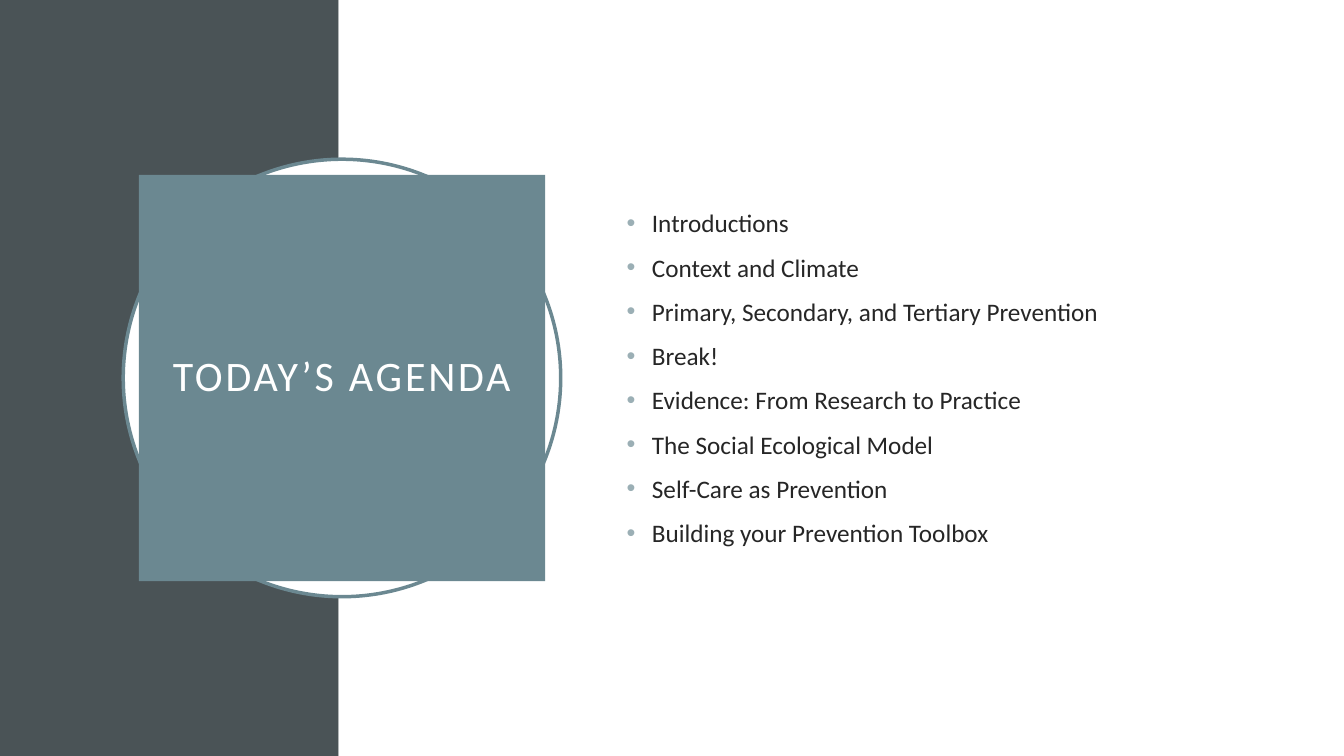
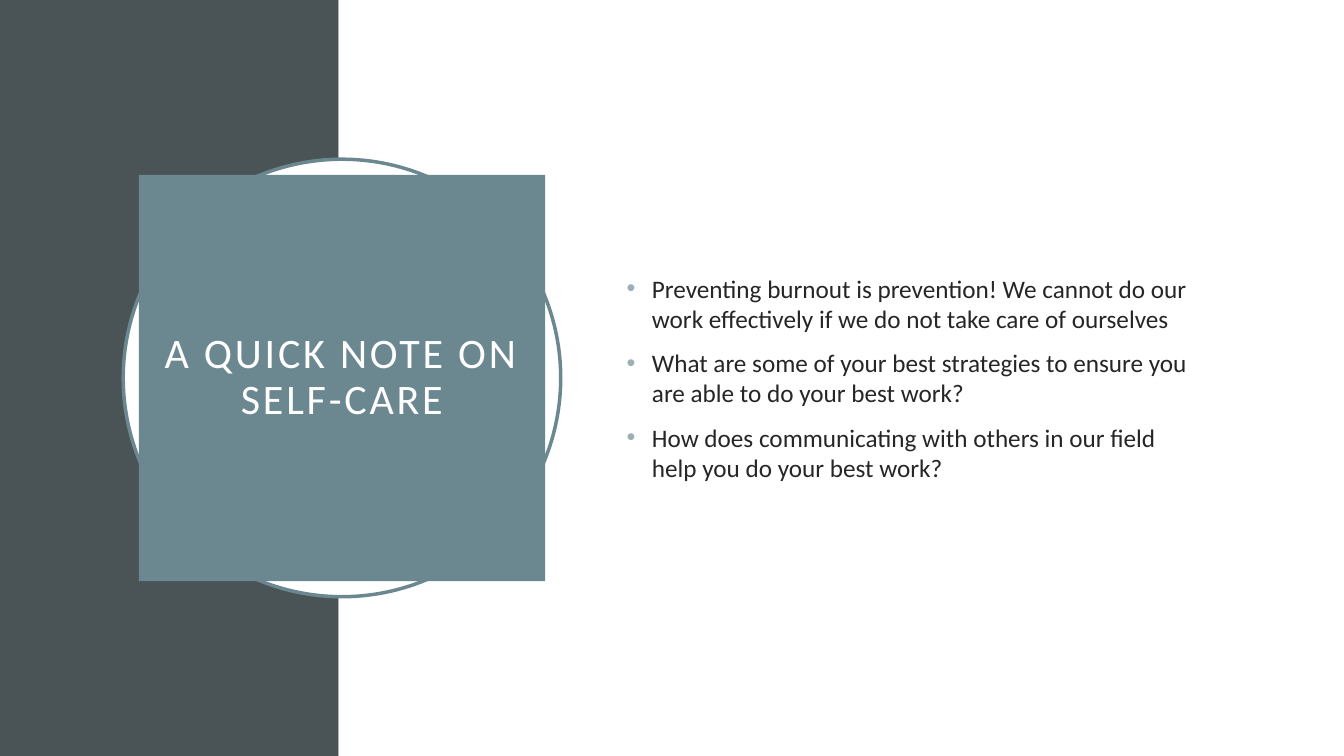
import dataclasses
import typing

import pptx
import pptx.dml.color
import pptx.enum.shapes
import pptx.enum.text
import pptx.oxml
import pptx.oxml.ns
import pptx.util

Pt = pptx.util.Pt
ShapeKind = pptx.enum.shapes.MSO_SHAPE
Align = pptx.enum.text.PP_ALIGN
Anchor = pptx.enum.text.MSO_ANCHOR

COLORS = {
    "band": "4A5356",
    "accent": "6B8891",
    "bullet": "9BAFB5",
    "text": "262626",
    "white": "FFFFFF",
}
FONT = "Calibri"
SLIDE_WIDTH, SLIDE_HEIGHT = 960, 540
BAND_WIDTH = 241.9
MEDALLION_X, MEDALLION_Y = 244.3, 270
RING_SIZE, TITLE_SIZE = 312.5, 290.2
BULLET_INDENT = 18

TITLE_FRAME = {
    "word_wrap": True,
    "vertical_anchor": Anchor.MIDDLE,
    **{f"margin_{side}": Pt(14.4) for side in ("left", "top", "right", "bottom")},
}
BODY_FRAME = {"word_wrap": True, "vertical_anchor": Anchor.MIDDLE}
TITLE_PARAGRAPH = {"alignment": Align.CENTER, "line_spacing": 0.9}
BODY_PARAGRAPH = {"alignment": Align.LEFT, "space_before": Pt(10)}
TITLE_FONT = {"name": FONT, "size": Pt(30)}
BODY_FONT = {"name": FONT, "size": Pt(18)}


@dataclasses.dataclass(frozen=True)
class Box:
    left: float
    top: float
    width: float
    height: float

    def lengths(self) -> list[int]:
        return [Pt(value) for value in dataclasses.astuple(self)]


@dataclasses.dataclass(frozen=True)
class Panel:
    kind: ShapeKind
    box: Box
    fill: str
    line: typing.Optional[str] = None


@dataclasses.dataclass(frozen=True)
class Topic:
    title: str
    bullets: tuple[str, ...]


def centred_square(size: float) -> Box:
    return Box(MEDALLION_X - size / 2, MEDALLION_Y - size / 2, size, size)


BACKDROP = (
    Panel(ShapeKind.RECTANGLE, Box(0, 0, BAND_WIDTH, SLIDE_HEIGHT), "band"),
    Panel(
        ShapeKind.RECTANGLE,
        Box(BAND_WIDTH, 0, SLIDE_WIDTH - BAND_WIDTH, SLIDE_HEIGHT),
        "white",
    ),
    Panel(ShapeKind.OVAL, centred_square(RING_SIZE), "white", "accent"),
)
TITLE_PANEL = Panel(ShapeKind.RECTANGLE, centred_square(TITLE_SIZE), "accent")
BODY_BOX = Box(440.6, 110.2, 419, 319)

TOPICS = (
    Topic(
        "TODAY’S AGENDA",
        (
            "Introductions",
            "Context and Climate",
            "Primary, Secondary, and Tertiary Prevention",
            "Break!",
            "Evidence: From Research to Practice",
            "The Social Ecological Model",
            "Self-Care as Prevention",
            "Building your Prevention Toolbox",
        ),
    ),
    Topic(
        "A QUICK NOTE ON SELF-CARE",
        (
            "Preventing burnout is prevention! We cannot do our work effectively "
            "if we do not take care of ourselves",
            "What are some of your best strategies to ensure you are able to do "
            "your best work?",
            "How does communicating with others in our field help you do your "
            "best work?",
        ),
    ),
)


def color(name: str) -> pptx.dml.color.RGBColor:
    return pptx.dml.color.RGBColor.from_string(COLORS[name])


def apply_format(target: typing.Any, values: dict[str, typing.Any]) -> None:
    for name, value in values.items():
        setattr(target, name, value)


def draw_panel(slide: typing.Any, panel: Panel) -> typing.Any:
    shape = slide.shapes.add_shape(panel.kind, *panel.box.lengths())
    shape.shadow.inherit = False
    shape.fill.solid()
    shape.fill.fore_color.rgb = color(panel.fill)
    if panel.line:
        shape.line.color.rgb = color(panel.line)
        shape.line.width = Pt(2.5)
    else:
        shape.line.fill.background()
    return shape


def write_run(
    paragraph: typing.Any, text: str, font: dict[str, typing.Any], color_name: str
) -> typing.Any:
    run = paragraph.add_run()
    run.text = text
    apply_format(run.font, font)
    run.font.color.rgb = color(color_name)
    return run


def add_bullet(paragraph: typing.Any) -> None:
    properties = paragraph._p.get_or_add_pPr()
    properties.set("marL", str(Pt(BULLET_INDENT)))
    properties.set("indent", str(-Pt(BULLET_INDENT)))
    namespace = pptx.oxml.ns.nsdecls("a")
    for markup in (
        f'<a:buClr {namespace}><a:srgbClr val="{COLORS["bullet"]}"/></a:buClr>',
        f'<a:buFont {namespace} typeface="Arial"/>',
        f'<a:buChar {namespace} char="•"/>',
    ):
        properties.append(pptx.oxml.parse_xml(markup))


def draw_title(slide: typing.Any, title: str) -> None:
    frame = draw_panel(slide, TITLE_PANEL).text_frame
    apply_format(frame, TITLE_FRAME)
    paragraph = frame.paragraphs[0]
    apply_format(paragraph, TITLE_PARAGRAPH)
    run = write_run(paragraph, title, TITLE_FONT, "white")
    run._r.get_or_add_rPr().set("spc", "200")


def draw_bullets(slide: typing.Any, bullets: tuple[str, ...]) -> None:
    frame = slide.shapes.add_textbox(*BODY_BOX.lengths()).text_frame
    apply_format(frame, BODY_FRAME)
    for index, text in enumerate(bullets):
        paragraph = frame.add_paragraph() if index else frame.paragraphs[0]
        apply_format(paragraph, BODY_PARAGRAPH)
        add_bullet(paragraph)
        write_run(paragraph, text, BODY_FONT, "text")


def main() -> None:
    presentation = pptx.Presentation()
    presentation.slide_width = Pt(SLIDE_WIDTH)
    presentation.slide_height = Pt(SLIDE_HEIGHT)
    for topic in TOPICS:
        slide = presentation.slides.add_slide(presentation.slide_layouts[6])
        for panel in BACKDROP:
            draw_panel(slide, panel)
        draw_title(slide, topic.title)
        draw_bullets(slide, topic.bullets)
    presentation.save("out.pptx")


if __name__ == "__main__":
    main()
